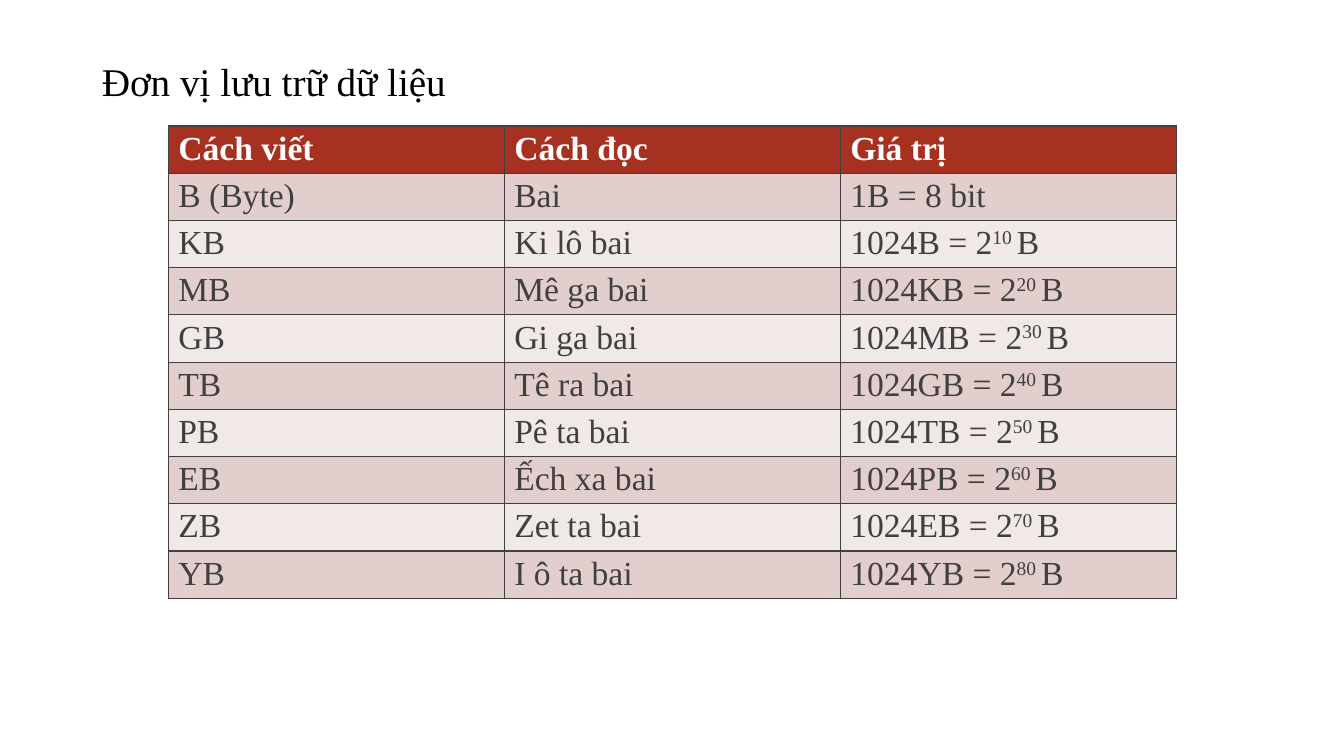
from dataclasses import dataclass

from lxml import etree
from pptx import Presentation
from pptx.dml.color import RGBColor
from pptx.enum.text import MSO_ANCHOR, MSO_AUTO_SIZE, PP_ALIGN
from pptx.oxml.ns import qn
from pptx.util import Pt

BOTTOM, TOP = MSO_ANCHOR.BOTTOM, MSO_ANCHOR.TOP
LEFT = PP_ALIGN.LEFT
NO_FIT = MSO_AUTO_SIZE.NONE
TITLE_ONLY = 5


@dataclass(frozen=True)
class Theme:
    font: str = "Times New Roman"
    title_size: float = 28
    cell_size: float = 24
    title: str = "000000"
    header_text: str = "FFFFFF"
    text: str = "404040"
    border: str = "404040"
    header_fill: str = "A63121"
    bands: tuple[str, str] = ("E1CECD", "F1E8E8")


@dataclass(frozen=True)
class Unit:
    symbol: str
    reading: str
    value: str
    power: str = ""


THEME = Theme()
HEADINGS = ("Cách viết", "Cách đọc", "Giá trị")
UNITS = (
    Unit("B (Byte)", "Bai", "1B = 8 bit"),
    Unit("KB", "Ki lô bai", "1024B = 2", "10"),
    Unit("MB", "Mê ga bai", "1024KB = 2", "20"),
    Unit("GB", "Gi ga bai", "1024MB = 2", "30"),
    Unit("TB", "Tê ra bai", "1024GB = 2", "40"),
    Unit("PB", "Pê ta bai", "1024TB = 2", "50"),
    Unit("EB", "Ếch xa bai", "1024PB = 2", "60"),
    Unit("ZB", "Zet ta bai", "1024EB = 2", "70"),
    Unit("YB", "I ô ta bai", "1024YB = 2", "80"),
)


def add_text(p, text: str, *, size: float = THEME.cell_size, color: str = THEME.text,
             bold: bool = False, superscript: bool = False) -> None:
    r = p.add_run()
    r.text = text
    r.font.name = THEME.font
    r.font.size = Pt(size)
    r.font.bold = bold
    r.font.color.rgb = RGBColor.from_string(color)
    if superscript:
        r._r.get_or_add_rPr().set("baseline", "30000")


def format_cell(cell, fill: str) -> None:
    cell.vertical_anchor = TOP
    cell.margin_left = cell.margin_right = Pt(7.2)
    cell.margin_top = cell.margin_bottom = Pt(3.05)
    # Borders must come before the fill in the cell properties
    tc_pr = cell._tc.get_or_add_tcPr()
    for side in ("a:lnL", "a:lnR", "a:lnT", "a:lnB"):
        ln = etree.SubElement(tc_pr, qn(side), w=str(Pt(1)))
        solid = etree.SubElement(ln, qn("a:solidFill"))
        etree.SubElement(solid, qn("a:srgbClr"), val=THEME.border)
    cell.fill.solid()
    cell.fill.fore_color.rgb = RGBColor.from_string(fill)


def add_title(s, text: str) -> None:
    sp = s.shapes.title
    sp.left, sp.top, sp.width, sp.height = Pt(65.5), Pt(30.2), Pt(774), Pt(48.2)
    tf = sp.text_frame
    tf.auto_size = NO_FIT
    tf.word_wrap = True
    tf.vertical_anchor = BOTTOM
    p = tf.paragraphs[0]
    p.alignment = LEFT
    p.line_spacing = 0.9
    add_text(p, text, size=THEME.title_size, color=THEME.title)


def add_unit_table(s, units: tuple[Unit, ...]) -> None:
    row_count = len(units) + 1
    table = s.shapes.add_table(row_count, len(HEADINGS), Pt(120.2), Pt(90),
                               Pt(720), Pt(33.75 * row_count)).table
    table.horz_banding = False

    # Header row
    for cell, heading in zip(table.rows[0].cells, HEADINGS):
        format_cell(cell, THEME.header_fill)
        add_text(cell.text_frame.paragraphs[0], heading,
                 color=THEME.header_text, bold=True)

    # One banded row per unit
    for i, unit in enumerate(units):
        cells = list(table.rows[i + 1].cells)
        for cell, text in zip(cells, (unit.symbol, unit.reading, unit.value)):
            format_cell(cell, THEME.bands[i % 2])
            add_text(cell.text_frame.paragraphs[0], text)
        if unit.power:
            p = cells[-1].text_frame.paragraphs[0]
            add_text(p, unit.power + " ", superscript=True)
            add_text(p, "B")


def main() -> None:
    prs = Presentation()
    prs.slide_width, prs.slide_height = Pt(960), Pt(540)
    s = prs.slides.add_slide(prs.slide_layouts[TITLE_ONLY])
    add_title(s, "Đơn vị lưu trữ dữ liệu")
    add_unit_table(s, UNITS)
    prs.save("out.pptx")


if __name__ == "__main__":
    main()
